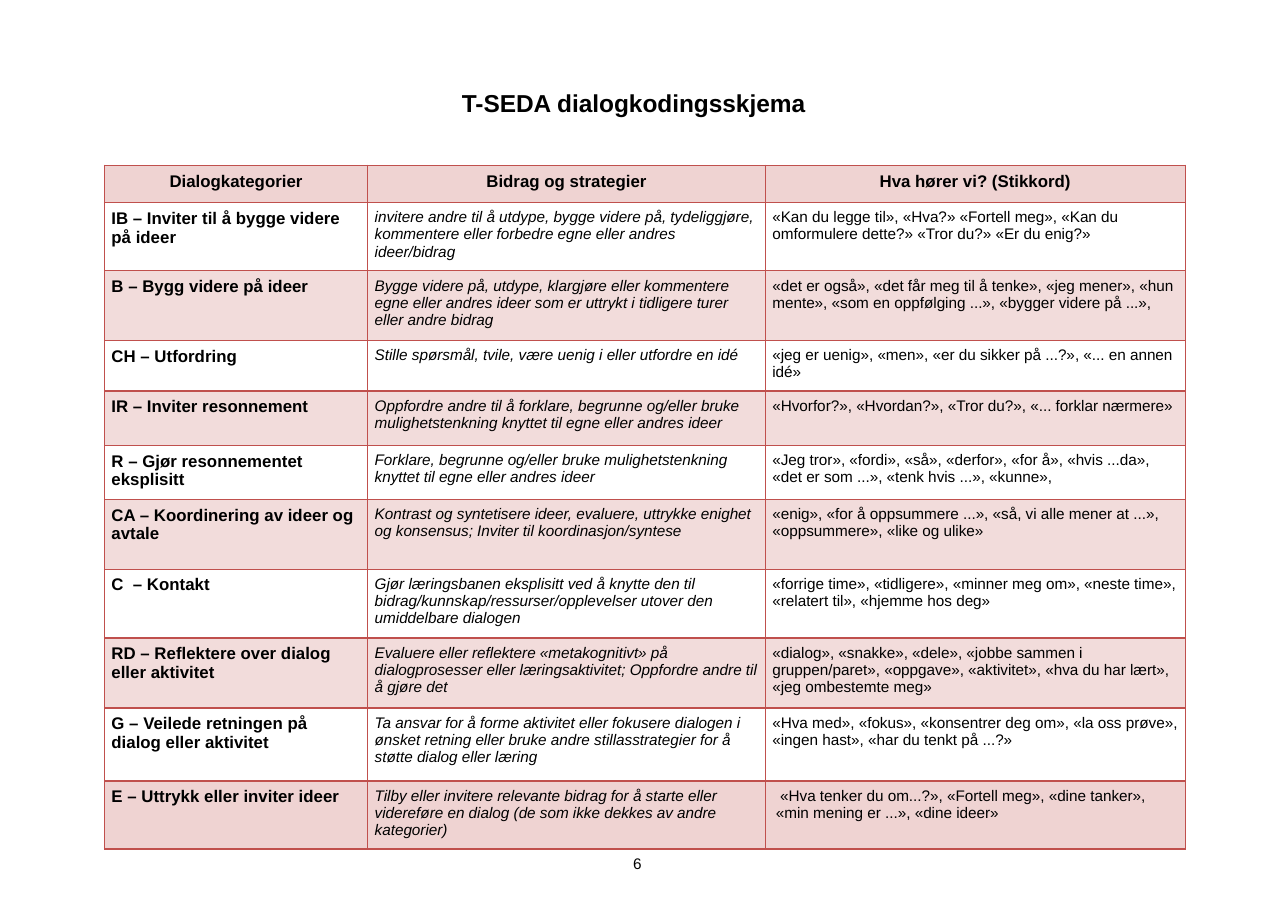
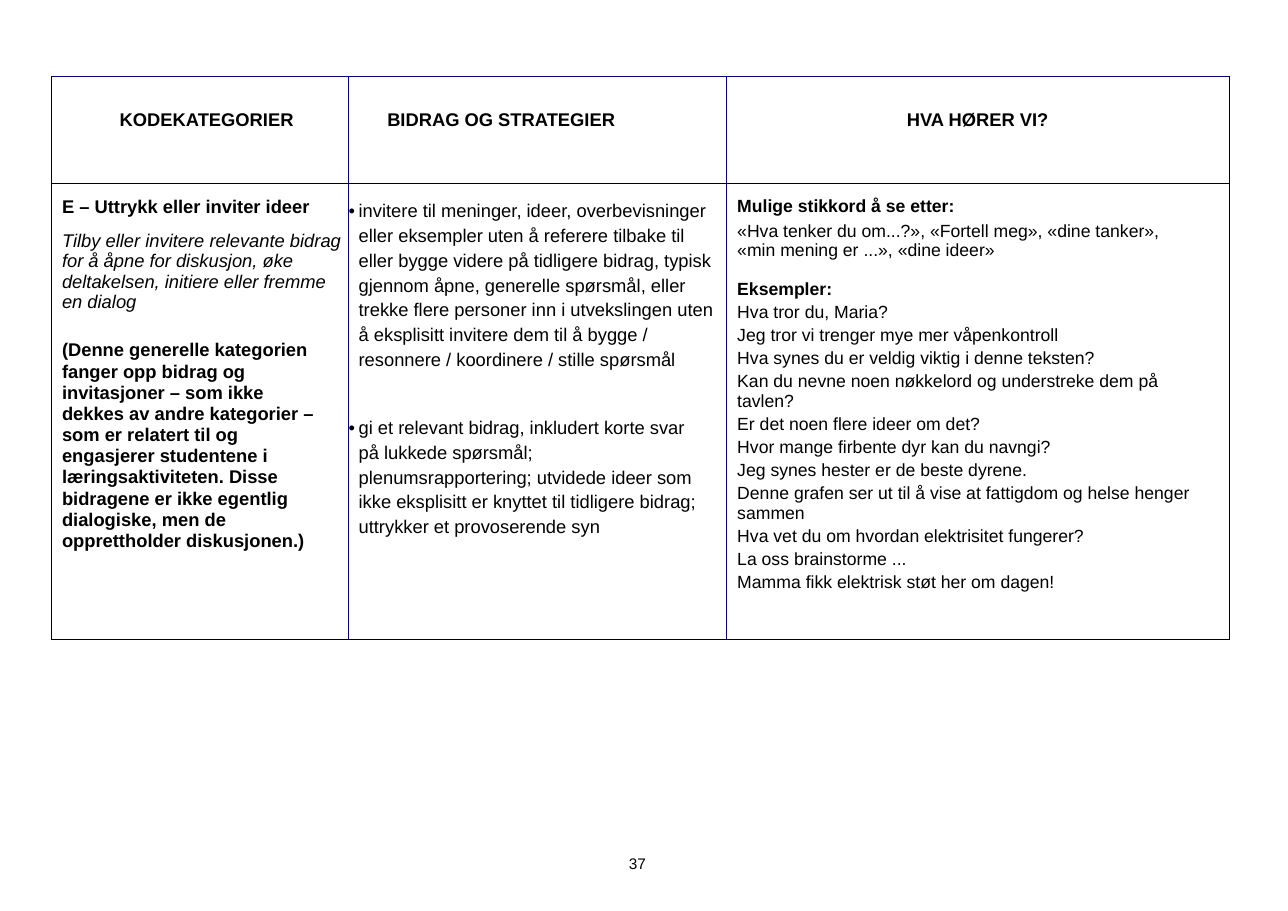
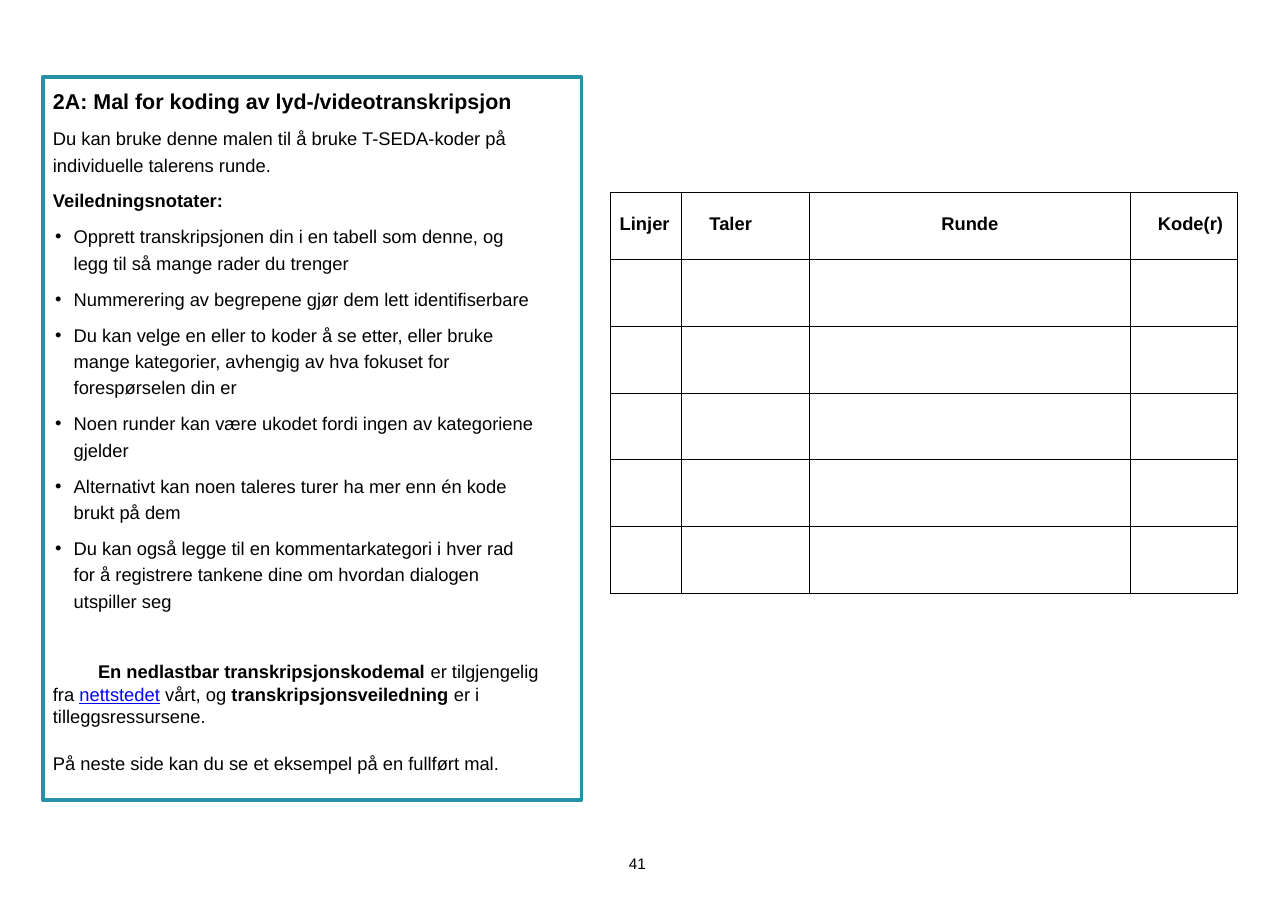
from dataclasses import dataclass
from typing import Optional

from lxml import etree
from pptx import Presentation
from pptx import util as u
from pptx.dml.color import RGBColor
from pptx.enum import shapes, text
from pptx.oxml.ns import qn

FONT = "Arial"
COLORS = {
    "text": "000000",
    "link": "0000FF",
    "header": "EFD3D2",
    "band": "F2DCDB",
    "rose_line": "C0504D",
    "navy_line": "000080",
    "black_line": "000000",
    "box_line": "2791A6",
}
LEFT, CENTER = text.PP_ALIGN.LEFT, text.PP_ALIGN.CENTER

CATEGORIES = [
    ("IB – Inviter til å bygge videre på ideer",
     "invitere andre til å utdype, bygge videre på, tydeliggjøre, kommentere eller forbedre egne eller andres ideer/bidrag",
     "«Kan du legge til», «Hva?» «Fortell meg», «Kan du omformulere dette?» «Tror du?» «Er du enig?»"),
    ("B – Bygg videre på ideer",
     "Bygge videre på, utdype, klargjøre eller kommentere egne eller andres ideer som er uttrykt i tidligere turer eller andre bidrag",
     "«det er også», «det får meg til å tenke», «jeg mener», «hun mente», «som en oppfølging ...», «bygger videre på ...»,"),
    ("CH – Utfordring",
     "Stille spørsmål, tvile, være uenig i eller utfordre en idé",
     "«jeg er uenig», «men», «er du sikker på ...?», «... en annen idé»"),
    ("IR – Inviter resonnement",
     "Oppfordre andre til å forklare, begrunne og/eller bruke mulighetstenkning knyttet til egne eller andres ideer",
     "«Hvorfor?», «Hvordan?», «Tror du?», «... forklar nærmere»"),
    ("R – Gjør resonnementet eksplisitt",
     "Forklare, begrunne og/eller bruke mulighetstenkning knyttet til egne eller andres ideer",
     "«Jeg tror», «fordi», «så», «derfor», «for å», «hvis ...da», «det er som ...», «tenk hvis ...», «kunne»,"),
    ("CA – Koordinering av ideer og avtale",
     "Kontrast og syntetisere ideer, evaluere, uttrykke enighet og konsensus; Inviter til koordinasjon/syntese",
     "«enig», «for å oppsummere ...», «så, vi alle mener at ...», «oppsummere», «like og ulike»"),
    ("C  – Kontakt",
     "Gjør læringsbanen eksplisitt ved å knytte den til bidrag/kunnskap/ressurser/opplevelser utover den umiddelbare dialogen",
     "«forrige time», «tidligere», «minner meg om», «neste time», «relatert til», «hjemme hos deg»"),
    ("RD – Reflektere over dialog eller aktivitet",
     "Evaluere eller reflektere «metakognitivt» på dialogprosesser eller læringsaktivitet; Oppfordre andre til å gjøre det",
     "«dialog», «snakke», «dele», «jobbe sammen i gruppen/paret», «oppgave», «aktivitet», «hva du har lært», «jeg ombestemte meg»"),
    ("G – Veilede retningen på dialog eller aktivitet",
     "Ta ansvar for å forme aktivitet eller fokusere dialogen i ønsket retning eller bruke andre stillasstrategier for å støtte dialog eller læring",
     "«Hva med», «fokus», «konsentrer deg om», «la oss prøve», «ingen hast», «har du tenkt på ...?»"),
    ("E – Uttrykk eller inviter ideer",
     "Tilby eller invitere relevante bidrag for å starte eller videreføre en dialog (de som ikke dekkes av andre kategorier)",
     "«Hva tenker du om...?», «Fortell meg», «dine tanker», «min mening er ...», «dine ideer»"),
]
EXAMPLES = [
    "Hva tror du, Maria?",
    "Jeg tror vi trenger mye mer våpenkontroll",
    "Hva synes du er veldig viktig i denne teksten?",
    "Kan du nevne noen nøkkelord og understreke dem på tavlen?",
    "Er det noen flere ideer om det?",
    "Hvor mange firbente dyr kan du navngi?",
    "Jeg synes hester er de beste dyrene.",
    "Denne grafen ser ut til å vise at fattigdom og helse henger sammen",
    "Hva vet du om hvordan elektrisitet fungerer?",
    "La oss brainstorme ...",
    "Mamma fikk elektrisk støt her om dagen!",
]
GUIDANCE = [
    "Opprett transkripsjonen din i en tabell som denne, og legg til så mange rader du trenger",
    "Nummerering av begrepene gjør dem lett identifiserbare",
    "Du kan velge en eller to koder å se etter, eller bruke mange kategorier, avhengig av hva fokuset for forespørselen din er",
    "Noen runder kan være ukodet fordi ingen av kategoriene gjelder",
    "Alternativt kan noen taleres turer ha mer enn én kode brukt på dem",
    "Du kan også legge til en kommentarkategori i hver rad for å registrere tankene dine om hvordan dialogen utspiller seg",
]


@dataclass
class Para:
    """A paragraph: text or (text, style) runs, with indents in cm and spacing in points."""
    runs: object
    size: float = 12
    bold: bool = False
    italic: bool = False
    align: object = LEFT
    left: float = 0
    right: float = 0
    first: float = 0
    line: float = 1.0
    before: float = 0
    bullet: Optional[str] = None


def rgb(name):
    """Return the named colour."""
    return RGBColor.from_string(COLORS[name])


def add_run(p, para, words, style):
    """Add one run, its style letters being b for bold and l for link."""
    r = p.add_run()
    r.text = words
    r.font.name = FONT
    r.font.size = u.Pt(para.size)
    r.font.bold = para.bold or "b" in style
    r.font.italic = para.italic
    r.font.underline = "l" in style
    r.font.color.rgb = rgb("link" if "l" in style else "text")


def write(tf, paras):
    """Fill a text frame with paragraphs."""
    for i, para in enumerate(paras):
        p = tf.add_paragraph() if i else tf.paragraphs[0]
        p.alignment = para.align
        p.line_spacing = para.line
        p.space_before = u.Pt(para.before)
        p.space_after = u.Pt(0)
        pPr = p._p.get_or_add_pPr()
        for key, value in (("marL", para.left), ("marR", para.right), ("indent", para.first)):
            pPr.set(key, str(int(u.Cm(value))))
        if para.bullet:
            etree.SubElement(pPr, qn("a:buFont")).set("typeface", FONT)
            etree.SubElement(pPr, qn("a:buChar")).set("char", para.bullet)
        else:
            etree.SubElement(pPr, qn("a:buNone"))
        runs = [(para.runs, "")] if isinstance(para.runs, str) else para.runs
        for words, style in runs:
            add_run(p, para, words, style)


def place_text(sp, left, top, width, height, paras):
    """Place a text shape without margins and fill it."""
    sp.left, sp.top, sp.width, sp.height = map(u.Cm, (left, top, width, height))
    tf = sp.text_frame
    tf.margin_left = tf.margin_top = tf.margin_right = tf.margin_bottom = 0
    tf.word_wrap = True
    tf.auto_size = text.MSO_AUTO_SIZE.NONE
    tf.vertical_anchor = text.MSO_ANCHOR.TOP
    write(tf, paras)


def add_page(prs, layout, number):
    """Add a slide with its page number."""
    s = prs.slides.add_slide(prs.slide_layouts[layout])
    sp = s.shapes.add_textbox(0, 0, 0, 0)
    place_text(sp, 14.3, 19.68, 0.8, 0.45, [Para(number, size=10, align=CENTER)])
    return s


def set_borders(cell, sides, pt):
    """Draw the borders of a cell in the colour given for each side."""
    tcPr = cell._tc.get_or_add_tcPr()
    for i, (side, color) in enumerate(sides.items()):
        ln = etree.Element(qn(f"a:ln{side}"), w=str(int(u.Pt(pt))))
        fill = etree.SubElement(ln, qn("a:solidFill"))
        etree.SubElement(fill, qn("a:srgbClr")).set("val", COLORS[color])
        tcPr.insert(i, ln)


def add_grid(s, left, top, widths, heights, line, pt, accent=None):
    """Add an unfilled table; the accent colours its top and inner vertical lines."""
    accent = accent or line
    size = (u.Cm(sum(widths)), u.Cm(sum(heights)))
    table = s.shapes.add_table(len(heights), len(widths), u.Cm(left), u.Cm(top), *size).table
    table.first_row = table.horz_banding = False
    for col, width in zip(table.columns, widths):
        col.width = u.Cm(width)
    for row, height in zip(table.rows, heights):
        row.height = u.Cm(height)
    last = len(widths) - 1
    for r in range(len(heights)):
        for c in range(len(widths)):
            cell = table.cell(r, c)
            cell.fill.background()
            set_borders(cell, {"L": accent if c else line, "R": accent if c < last else line,
                               "T": line if r else accent, "B": line}, pt)
    return table


def fill_cell(cell, paras, margins, fill=None):
    """Write into a cell with left, top, right and bottom margins in cm."""
    cell.margin_left, cell.margin_top, cell.margin_right, cell.margin_bottom = map(u.Cm, margins)
    if fill:
        cell.fill.solid()
        cell.fill.fore_color.rgb = rgb(fill)
    write(cell.text_frame, paras)


def coding_scheme(prs):
    """Build the overview of dialogue categories."""
    s = add_page(prs, 5, "6")
    place_text(s.shapes.title, 10.62, 2.03, 9.1, 0.7,
               [Para("T-SEDA dialogkodingsskjema", size=16, bold=True, left=0.03)])
    heights = [0.86, 1.57, 1.61, 1.16, 1.26, 1.24, 1.61, 1.59, 1.61, 1.68, 1.57]
    table = add_grid(s, 2.41, 3.81, [6.07, 9.17, 9.68], heights, "rose_line", 1)
    margins = (0.16, 0.15, 0.16, 0.15)
    for c, head in enumerate(("Dialogkategorier", "Bidrag og strategier", "Hva hører vi? (Stikkord)")):
        fill_cell(table.cell(0, c), [Para(head, size=11, bold=True, align=CENTER)], margins, "header")
    last = len(CATEGORIES)
    for r, (category, strategy, cues) in enumerate(CATEGORIES, 1):
        fill = "header" if r == last else None if r % 2 else "band"
        indent = {"left": 0.08, "first": 0.1} if r == last else {}
        cells = (Para(category, size=11, bold=True),
                 Para(strategy, size=10, italic=True),
                 Para(cues, size=10, **indent))
        for c, para in enumerate(cells):
            fill_cell(table.cell(r, c), [para], margins, fill)


def category_detail(prs):
    """Build the detailed page for category E."""
    s = add_page(prs, 6, "37")
    table = add_grid(s, 1.19, 1.76, [6.85, 8.71, 11.59], [2.47, 10.51],
                     "black_line", 0.75, "navy_line")
    heads = (("KODEKATEGORIER", LEFT, 1.57), ("BIDRAG OG STRATEGIER", LEFT, 0.89),
             ("HVA HØRER VI?", CENTER, 0))
    for c, (head, align, left) in enumerate(heads):
        fill_cell(table.cell(0, c), [Para(head, bold=True, align=align)], (left, 0.76, 0, 0))
    category = [
        Para("E – Uttrykk eller inviter ideer", bold=True),
        Para("Tilby eller invitere relevante bidrag for å åpne for diskusjon, øke deltakelsen, "
             "initiere eller fremme en dialog", italic=True, before=8.7),
        Para("(Denne generelle kategorien fanger opp bidrag og invitasjoner – som ikke dekkes av "
             "andre kategorier – som er relatert til og engasjerer studentene i læringsaktiviteten. "
             "Disse bidragene er ikke egentlig dialogiske, men de opprettholder diskusjonen.)",
             bold=True, right=0.53, line=1.03, before=17.6),
    ]
    item = {"left": 0.23, "first": -0.23, "line": 1.21, "bullet": "•"}
    strategies = [
        Para("invitere til meninger, ideer, overbevisninger eller eksempler uten å referere tilbake "
             "til eller bygge videre på tidligere bidrag, typisk gjennom åpne, generelle spørsmål, "
             "eller trekke flere personer inn i utvekslingen uten å eksplisitt invitere dem til å "
             "bygge / resonnere / koordinere / stille spørsmål", right=0.17, **item),
        Para("gi et relevant bidrag, inkludert korte svar på lukkede spørsmål; plenumsrapportering; "
             "utvidede ideer som ikke eksplisitt er knyttet til tidligere bidrag; uttrykker et "
             "provoserende syn", right=0.58, before=28, **item),
    ]
    cues = [
        Para("Mulige stikkord å se etter:", size=11.5, bold=True),
        Para(CATEGORIES[-1][2], size=11.5, line=1.01, before=3.1),
        Para("Eksempler:", size=11.5, bold=True, before=12.5),
    ] + [Para(example, size=11.5, line=1.01, before=2.1) for example in EXAMPLES]
    columns = ((category, 0.24, 0.1), (strategies, 0, 0), (cues, 0.25, 0.78))
    for c, (paras, left, right) in enumerate(columns):
        fill_cell(table.cell(1, c), paras, (left, 0.3, right, 0))


def transcript_template(prs):
    """Build the guidance box and the empty transcript table."""
    s = add_page(prs, 1, "41")
    box = s.shapes.add_shape(shapes.MSO_SHAPE.RECTANGLE, *map(u.Cm, (0.99, 1.78, 12.42, 16.66)))
    box.shadow.inherit = False
    box.fill.background()
    box.line.color.rgb = rgb("box_line")
    box.line.width = u.Pt(2.5)
    place_text(s.shapes.title, 1.22, 2.02, 11.24, 0.6,
               [Para("2A: Mal for koding av lyd-/videotranskripsjon", size=14, bold=True)])
    closing = [("En nedlastbar transkripsjonskodemal ", "b"), ("er tilgjengelig fra ", ""),
               ("nettstedet", "l"), (" vårt, og ", ""), ("transkripsjonsveiledning", "b"),
               (" er i tilleggsressursene.", "")]
    paras = [
        Para("Du kan bruke denne malen til å bruke T-SEDA-koder på individuelle talerens runde.",
             line=1.22),
        Para("Veiledningsnotater:", bold=True, before=8.8),
        *[Para(note, left=0.48, first=-0.43, line=1.2, before=6.2, bullet="•") for note in GUIDANCE],
        Para(closing, first=1.04, line=1.02, before=31.5),
        Para("På neste side kan du se et eksempel på en fullført mal.", before=16.3),
    ]
    place_text(s.placeholders[1], 1.22, 2.82, 11.24, 15.2, paras)
    table = add_grid(s, 14.07, 4.44, [1.64, 2.95, 7.41, 2.46], [1.54] * 6, "black_line", 0.75)
    heads = (("Linjer", LEFT, 0.22), ("Taler", LEFT, 0.65), ("Runde", CENTER, 0),
             ("Kode(r)", LEFT, 0.63))
    for c, (head, align, left) in enumerate(heads):
        fill_cell(table.cell(0, c), [Para(head, bold=True, align=align)], (left, 0.48, 0, 0))


def main():
    """Build and save the presentation."""
    prs = Presentation()
    prs.slide_width, prs.slide_height = u.Cm(29.7), u.Cm(21)
    coding_scheme(prs)
    category_detail(prs)
    transcript_template(prs)
    prs.save("out.pptx")


if __name__ == "__main__":
    main()
